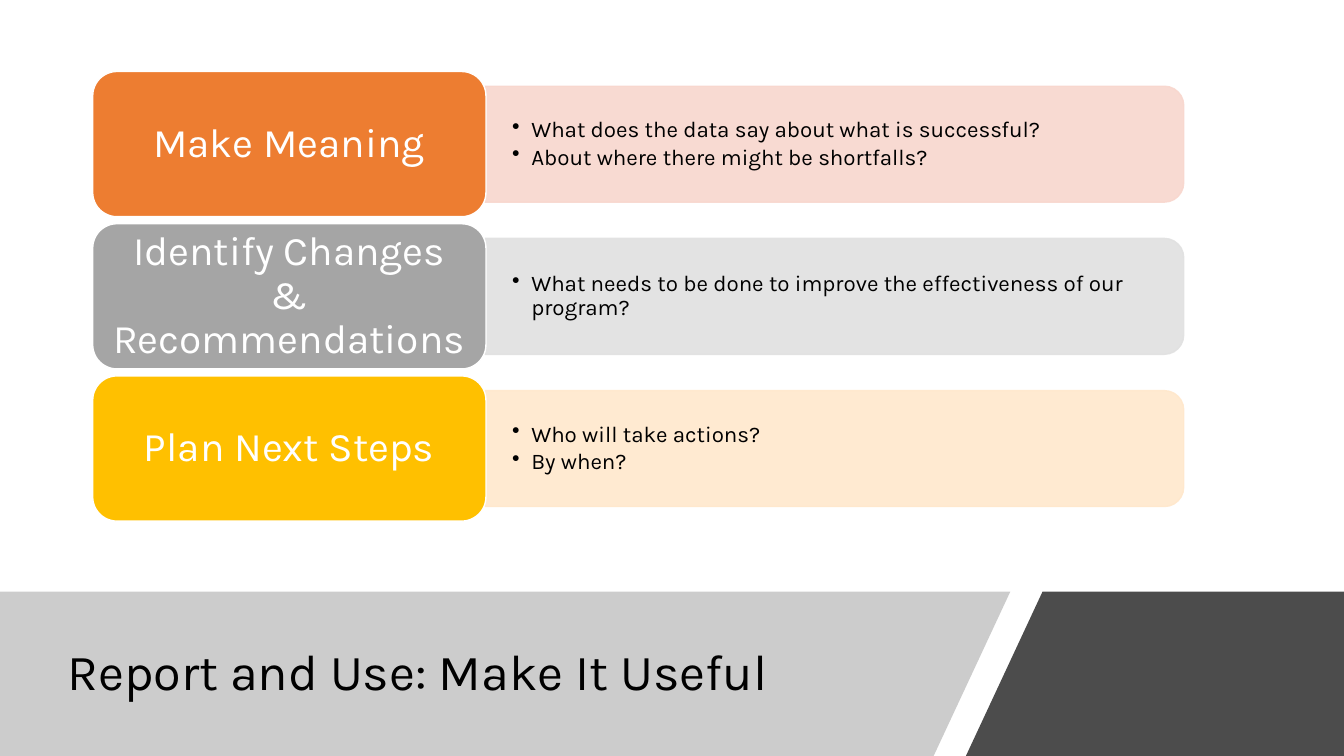
from pptx import Presentation
from pptx.dml.color import RGBColor
from pptx.enum.shapes import MSO_SHAPE
from pptx.enum.text import MSO_ANCHOR, PP_ALIGN
from pptx.oxml.xmlchemy import OxmlElement
from pptx.util import Inches, Pt

BLACK = RGBColor(0x00, 0x00, 0x00)
WHITE = RGBColor(0xFF, 0xFF, 0xFF)
GRAY = RGBColor(0x80, 0x80, 0x80)
ORANGE = RGBColor(0xED, 0x7D, 0x31)
PALE_ORANGE = RGBColor(0xF8, 0xD7, 0xCE)
SILVER = RGBColor(0xA5, 0xA5, 0xA5)
PALE_SILVER = RGBColor(0xE1, 0xE1, 0xE1)
GOLD = RGBColor(0xFF, 0xC0, 0x00)
PALE_GOLD = RGBColor(0xFF, 0xE8, 0xCC)

FONT = "Karla"
ROW_TOP, ROW_STEP = 0.71, 1.51
LABEL_LEFT, LABEL_W, LABEL_H = 0.92, 3.9, 1.44
PANEL_LEFT, PANEL_W, PANEL_H = 4.81, 6.93, 1.15
BAND_TOP, BAND_BOTTOM = 5.87, 7.5

STEPS = [
    ("Make Meaning", ORANGE, PALE_ORANGE,
     ["What does the data say about what is successful?",
      "About where there might be shortfalls?"]),
    ("Identify Changes & Recommendations", SILVER, PALE_SILVER,
     ["What needs to be done to improve the effectiveness of our program?"]),
    ("Plan Next Steps", GOLD, PALE_GOLD,
     ["Who will take actions?", "By when?"]),
]


def set_alpha(fill_parent, percent):
    for clr in fill_parent.iter("{*}srgbClr"):
        alpha = OxmlElement("a:alpha")
        alpha.set("val", str(percent * 1000))
        clr.append(alpha)


def paint(sp, fill, line=None, alpha=100):
    sp.shadow.inherit = False
    sp.fill.solid()
    sp.fill.fore_color.rgb = fill
    if line is None:
        sp.line.fill.background()
    else:
        sp.line.color.rgb = line
        sp.line.width = Pt(1)
    if alpha < 100:
        set_alpha(sp.element.spPr, alpha)


def add_bullet(p):
    pPr = p._p.get_or_add_pPr()
    for name, value in {"marL": 0.19, "indent": -0.19}.items():
        pPr.set(name, str(Inches(value)))
    bullet = OxmlElement("a:buChar")
    bullet.set("char", "•")
    pPr.append(bullet)


def write(sp, lines, size, color, align=PP_ALIGN.LEFT, inset=(0.1, 0.05), bullets=False):
    tf = sp.text_frame
    dx, dy = map(Inches, inset)
    frame_format = {"word_wrap": True, "vertical_anchor": MSO_ANCHOR.MIDDLE,
                    "margin_left": dx, "margin_right": dx,
                    "margin_top": dy, "margin_bottom": dy}
    for name, value in frame_format.items():
        setattr(tf, name, value)
    for i, line in enumerate(lines):
        p = tf.add_paragraph() if i else tf.paragraphs[0]
        p.alignment = align
        p.line_spacing = 0.9
        if bullets:
            p.space_after = Pt(2.4)
            add_bullet(p)
        r = p.add_run()
        r.text = line
        for name, value in {"name": FONT, "size": Pt(size)}.items():
            setattr(r.font, name, value)
        r.font.color.rgb = color


def add_band(s, points, color, alpha):
    start, *rest = [(Inches(x), Inches(y)) for x, y in points]
    builder = s.shapes.build_freeform(*start)
    builder.add_line_segments(rest, close=True)
    paint(builder.convert_to_shape(), color, alpha=alpha)


def add_text(s, box, lines, size, **options):
    sp = s.shapes.add_textbox(*map(Inches, box))
    write(sp, lines, size, BLACK, **options)


def add_panel(s, middle, color, questions):
    center = PANEL_LEFT + PANEL_W / 2
    sp = s.shapes.add_shape(
        MSO_SHAPE.ROUND_2_SAME_RECTANGLE,
        Inches(center - PANEL_H / 2), Inches(middle - PANEL_W / 2),
        Inches(PANEL_H), Inches(PANEL_W))
    sp.rotation = 90
    paint(sp, color, color, alpha=90)
    add_text(s, (PANEL_LEFT, middle - 0.52, 6.87, 1.04), questions, 16,
             inset=(0.27, 0.14), bullets=True)


def add_label(s, top, color, label):
    sp = s.shapes.add_shape(
        MSO_SHAPE.ROUNDED_RECTANGLE,
        Inches(LABEL_LEFT), Inches(top), Inches(LABEL_W), Inches(LABEL_H))
    paint(sp, color, WHITE)
    write(sp, [label], 29, WHITE, align=PP_ALIGN.CENTER, inset=(0.12, 0.06))


def main():
    prs = Presentation()
    prs.slide_width, prs.slide_height = Inches(13.33), Inches(7.5)
    s = prs.slides.add_slide(prs.slide_layouts[6])

    add_band(s, [(0, BAND_TOP), (10.02, BAND_TOP), (9.26, BAND_BOTTOM), (0, BAND_BOTTOM)],
             GRAY, 40)
    add_text(s, (0.57, 6.09, 8.44, 1.2), ["Report and Use: Make It Useful"], 36)
    add_band(s, [(10.34, BAND_TOP), (13.33, BAND_TOP), (13.33, BAND_BOTTOM), (9.58, BAND_BOTTOM)],
             BLACK, 70)

    for i, (label, color, pale, questions) in enumerate(STEPS):
        top = ROW_TOP + i * ROW_STEP
        add_panel(s, top + LABEL_H / 2, pale, questions)
        add_label(s, top, color, label)

    prs.save("out.pptx")


if __name__ == "__main__":
    main()
